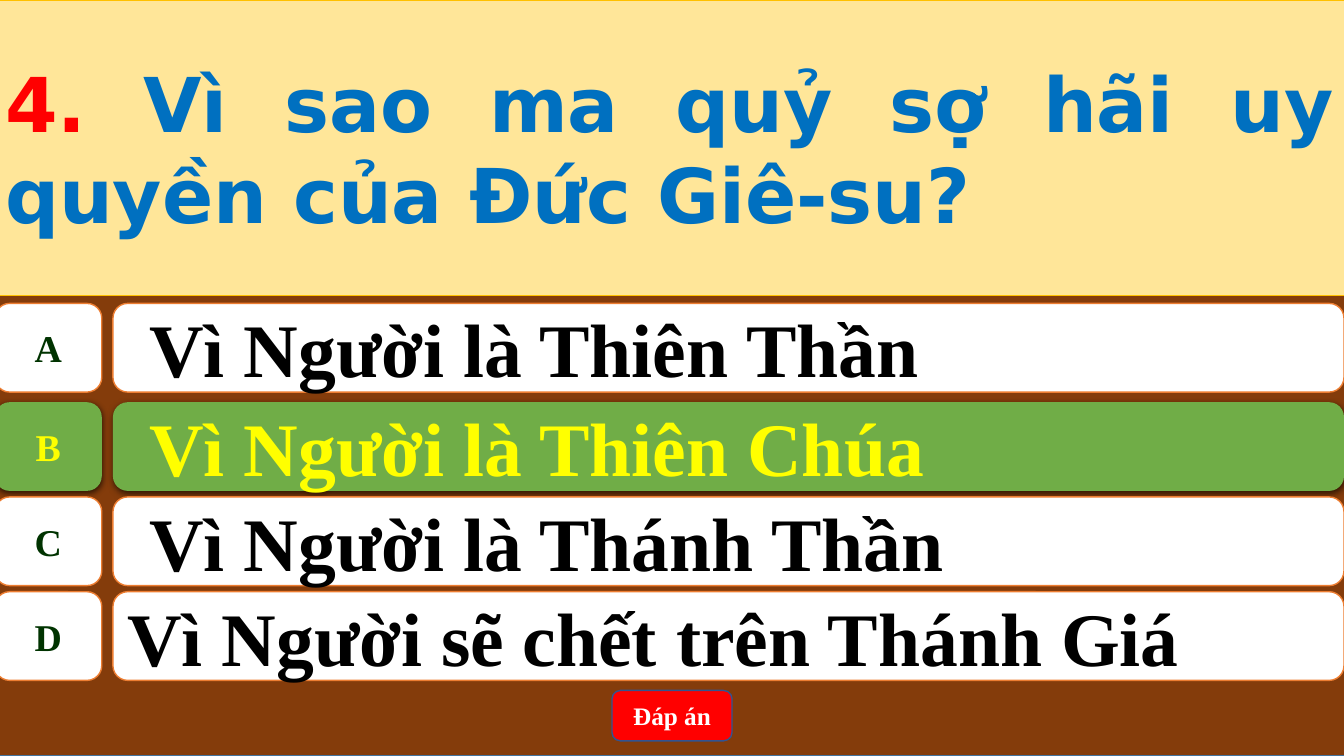
from pptx import Presentation
from pptx.dml.color import RGBColor
from pptx.enum.shapes import MSO_SHAPE as Shape
from pptx.enum.text import MSO_ANCHOR as Anchor, MSO_AUTO_SIZE as AutoSize, PP_ALIGN as Align
from pptx.oxml import parse_xml
from pptx.oxml.ns import nsdecls, qn
from pptx.util import Pt

PX = 9144  # EMU in one px, 100 px to the inch

WHITE = RGBColor(0xFF, 0xFF, 0xFF)
BLACK = RGBColor(0x00, 0x00, 0x00)
RED = RGBColor(0xFF, 0x00, 0x00)
YELLOW = RGBColor(0xFF, 0xFF, 0x00)
BLUE = RGBColor(0x00, 0x70, 0xC0)
BROWN = RGBColor(0x84, 0x3C, 0x0B)
STEEL = RGBColor(0x43, 0x73, 0x9E)
NAVY = RGBColor(0x32, 0x54, 0x91)
CREAM = RGBColor(0xFF, 0xE6, 0x99)
GOLD = RGBColor(0xFF, 0xC0, 0x00)
ORANGE = RGBColor(0xED, 0x7D, 0x31)
GREEN = RGBColor(0x70, 0xAD, 0x47)
DARK_GREEN = RGBColor(0x00, 0x33, 0x00)

LEFT, WIDTH = -5, 1339
ANSWER_LEFT, ROW_HEIGHT = 112, 88
HANGING = (50, -28)

# letter, top, answer, (left margin, first-line indent), correct
ANSWERS = [
    ("A", 301, "Vì Người là Thiên Thần", HANGING, False),
    ("B", 399, "Vì Người là Thiên Chúa", HANGING, True),
    ("C", 493, "Vì Người là Thánh Thần", HANGING, False),
    ("D", 587, "Vì Người sẽ chết trên Thánh Giá", None, False),
]


class QuizSlide:
    serif, sans = "Times New Roman", "DejaVu Sans"

    def __init__(self, deck):
        self.page = deck.slides.add_slide(deck.slide_layouts[5])

    def paint(self, box, fill, line=None, weight=1):
        box.fill.solid()
        box.fill.fore_color.rgb = fill
        if line is None:
            box.line.fill.background()
        else:
            box.line.color.rgb = line
            box.line.width = Pt(weight)

    def shape(self, kind, left, top, width, height, fill, line=None):
        box = self.page.shapes.add_shape(
            kind, *(value * PX for value in (left, top, width, height)))
        box.shadow.inherit = False
        self.paint(box, fill, line)
        return box

    def label(self, box, text, size, colour, align=Align.LEFT, font=serif, wrap=True):
        frame = box.text_frame
        frame.text = text
        frame.word_wrap = wrap
        frame.auto_size = AutoSize.NONE
        frame.vertical_anchor = Anchor.MIDDLE
        para = frame.paragraphs[0]
        para.alignment = align
        self.style(para.runs[0], size, colour, font)
        return para

    def style(self, span, size, colour, font):
        span.font.name = font
        span.font.size = Pt(size)
        span.font.bold = True
        span.font.color.rgb = colour

    def question(self, number, text):
        title = self.page.shapes.title
        title.left, title.top, title.width, title.height = (
            value * PX for value in (LEFT, 0, WIDTH, 293))
        self.paint(title, CREAM, GOLD, 0.5)
        para = self.label(title, number, 54, RED, Align.JUSTIFY, self.sans)
        span = para.add_run()
        span.text = text
        self.style(span, 54, BLUE, self.sans)
        # Bring the title in front of the backdrop
        title.element.getparent().append(title.element)

    def indent(self, para, margin, first):
        para.level = 1
        props = para._p.get_or_add_pPr()
        props.set("marL", str(margin * PX))
        props.set("indent", str(first * PX))

    def cast_shadow(self, box):
        effects = box.element.spPr.find(qn("a:effectLst"))
        effects.append(parse_xml(
            f'<a:outerShdw {nsdecls("a")} blurRad="57150" dist="19050" dir="5400000"'
            ' algn="ctr" rotWithShape="0"><a:srgbClr val="000000">'
            '<a:alpha val="63000"/></a:srgbClr></a:outerShdw>'))

    def answer(self, letter, top, text, hanging, correct):
        fill, line = (GREEN, None) if correct else (WHITE, ORANGE)
        bar = self.shape(Shape.ROUNDED_RECTANGLE, ANSWER_LEFT, top, 1221, ROW_HEIGHT, fill, line)
        para = self.label(bar, text, 54, YELLOW if correct else BLACK)
        if hanging:
            self.indent(para, *hanging)
        tile = self.shape(Shape.FLOWCHART_ALTERNATE_PROCESS, LEFT, top, 106, ROW_HEIGHT, fill, line)
        self.label(tile, letter, 27, YELLOW if correct else DARK_GREEN, Align.CENTER, wrap=False)
        if correct:
            self.cast_shadow(bar)
            self.cast_shadow(tile)


def main():
    deck = Presentation()
    deck.slide_width, deck.slide_height = 1333 * PX, 750 * PX
    quiz = QuizSlide(deck)

    # Backdrop and question
    quiz.shape(Shape.RECTANGLE, LEFT, 0, WIDTH, 750, BROWN, STEEL)
    quiz.question("4. ", "Vì sao ma quỷ sợ hãi uy quyền của Đức Giê-su?")

    # Answer rows
    for row in ANSWERS:
        quiz.answer(*row)

    # Answer button
    button = quiz.shape(Shape.ROUNDED_RECTANGLE, 607, 685, 119, 50, RED, NAVY)
    quiz.label(button, "Đáp án", 18, WHITE, Align.CENTER)

    deck.save("out.pptx")


if __name__ == "__main__":
    main()
